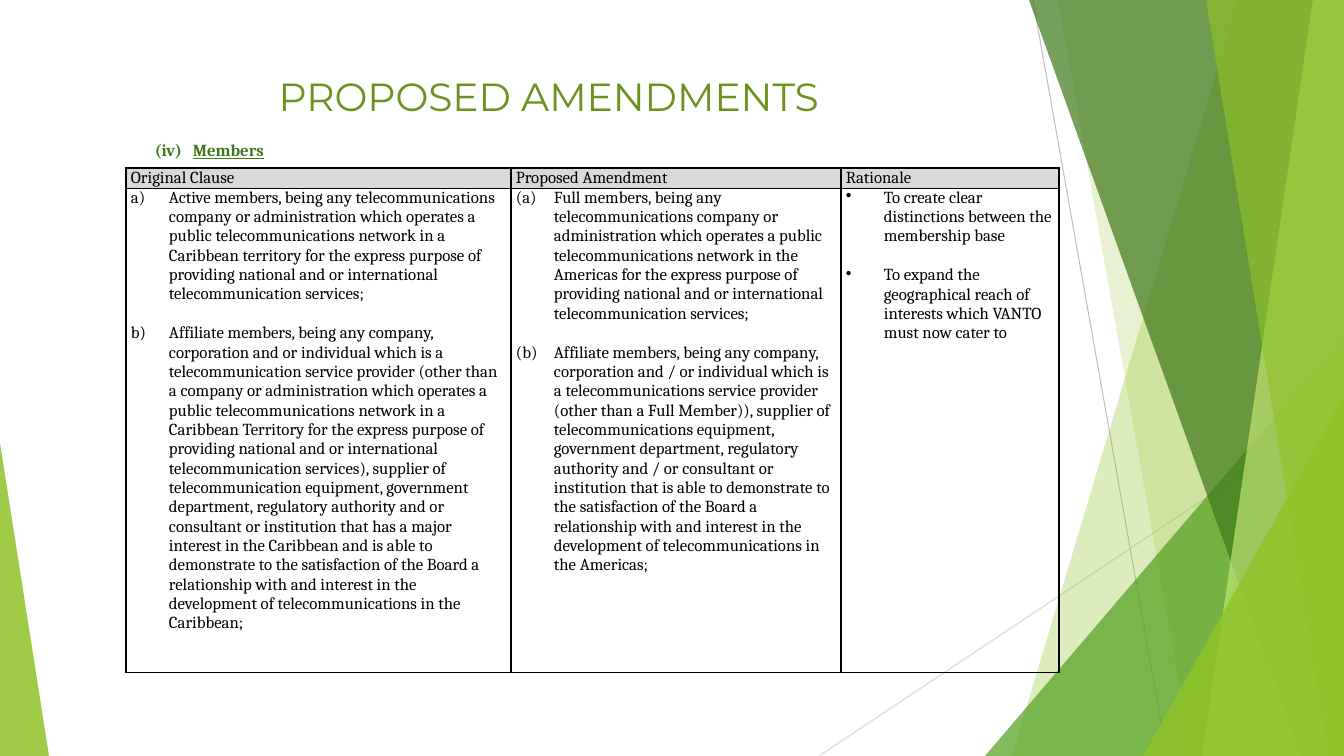
import collections

import lxml.etree
import pptx
import pptx.dml.color
import pptx.enum.shapes
import pptx.enum.text
import pptx.oxml
import pptx.oxml.ns
import pptx.util

RGBColor = pptx.dml.color.RGBColor
Shape = pptx.enum.shapes.MSO_SHAPE
Anchor = pptx.enum.text.MSO_ANCHOR
Align = pptx.enum.text.PP_ALIGN
Pt = pptx.util.Pt
qn = pptx.oxml.ns.qn

EMU_PER_PX = 914400 / 100.8
PAGE_WIDTH, PAGE_HEIGHT = 1344, 756

BLACK = RGBColor(0x00, 0x00, 0x00)
HEADER_GREY = RGBColor(0xD9, 0xD9, 0xD9)
LINE_GREY = RGBColor(0xBF, 0xBF, 0xBF)
LIME = RGBColor(0x90, 0xC2, 0x26)
PALE_LIME = RGBColor(0xC0, 0xE4, 0x74)
GREEN = RGBColor(0x54, 0xA0, 0x21)
DARK_GREEN = RGBColor(0x3F, 0x78, 0x19)
TITLE_GREEN = RGBColor(0x6C, 0x92, 0x1D)

BODY_FONT = {"name": "Cambria", "size": Pt(12)}
HANGING = 38

Box = collections.namedtuple("Box", "left top width height")

# Clause items hang from a label; each column has its own label style.
COLUMNS = [
    ("Original Clause", 385, "alphaLcParenR", [
        "Active members, being any telecommunications company or administration which operates a public "
        "telecommunications network in a Caribbean territory for the express purpose of providing national "
        "and or international telecommunication services;",
        "Affiliate members, being any company, corporation and or individual which is a telecommunication "
        "service provider (other than a company or administration which operates a public telecommunications "
        "network in a Caribbean Territory for the express purpose of providing national and or international "
        "telecommunication services), supplier of telecommunication equipment, government department, "
        "regulatory authority and or consultant or institution that has a major interest in the Caribbean "
        "and is able to demonstrate to the satisfaction of the Board a relationship with and interest in "
        "the development of telecommunications in the Caribbean;",
    ]),
    ("Proposed Amendment", 330, "alphaLcParenBoth", [
        "Full members, being any telecommunications company or administration which operates a public "
        "telecommunications network in the Americas for the express purpose of providing national and or "
        "international telecommunication services;",
        "Affiliate members, being any company, corporation and / or individual which is a "
        "telecommunications service provider (other than a Full Member)), supplier of telecommunications "
        "equipment, government department, regulatory authority and / or consultant or institution that is "
        "able to demonstrate to the satisfaction of the Board a relationship with and interest in the "
        "development of telecommunications in the Americas;",
    ]),
    ("Rationale", 218, None, [
        "To create clear distinctions between the membership base",
        "To expand the geographical reach of interests which VANTO must now cater to",
    ]),
]


def px(length):
    return round(length * EMU_PER_PX)


def set_all(target, values):
    for name, value in values.items():
        setattr(target, name, value)


def add_span(para, text, color, **values):
    span = para.add_run()
    span.text = text
    set_all(span.font, values)
    span.font.color.rgb = color


def hang(para):
    properties = para._p.get_or_add_pPr()
    properties.set("marL", str(px(HANGING)))
    properties.set("indent", str(-px(HANGING)))
    return properties


def paint(shape, color, opacity):
    """Give a shape a see-through fill with no outline or shadow."""
    shape.shadow.inherit = False
    shape.fill.solid()
    shape.fill.fore_color.rgb = color
    shape.line.fill.background()
    fill = shape.fill._xPr.find(qn("a:solidFill"))
    lxml.etree.SubElement(fill[0], qn("a:alpha"), val=str(opacity * 1000))


def add_triangle(page, box, apex, color, opacity):
    shape = page.shapes.add_shape(Shape.ISOSCELES_TRIANGLE, *map(px, box))
    shape.adjustments[0] = apex
    paint(shape, color, opacity)


def add_facet(page, box, top_x, bottom_x, color, opacity):
    """Fill the box to the right of a slanting edge."""
    right, bottom = box.left + box.width, box.top + box.height
    builder = page.shapes.build_freeform(box.left + top_x, box.top, scale=EMU_PER_PX)
    builder.add_line_segments([(right, box.top), (right, bottom), (box.left + bottom_x, bottom)])
    paint(builder.convert_to_shape(), color, opacity)


def add_hairline(page, start, end, color):
    line = page.shapes.add_connector(
        pptx.enum.shapes.MSO_CONNECTOR.STRAIGHT, *map(px, start + end))
    line.line.color.rgb = color
    line.line.width = Pt(0.75)
    lxml.etree.SubElement(line._element.spPr, qn("a:effectLst"))


def draw_facets(page, box):
    right, bottom = box.left + box.width, box.top + box.height
    add_hairline(page, (box.left + 214, box.top), (box.left + 348, bottom), LINE_GREY)
    add_hairline(page, (right, box.top + 406), (box.left, bottom), HEADER_GREY)

    def corner(left, top, color, opacity):
        area = Box(box.left + left, box.top + top, box.width - left, box.height - top)
        add_triangle(page, area, 1, color, opacity)

    add_facet(page, box, 419, 193, LIME, 30)
    add_facet(page, box, 239, 373, LIME, 20)
    corner(166, 336, GREEN, 72)
    add_facet(page, box, 210, 482, DARK_GREEN, 70)
    add_facet(page, box, 494, 383, PALE_LIME, 70)
    add_facet(page, box, 387, 510, LIME, 65)
    corner(324, 396, LIME, 80)


def add_text_box(page, box, anchor):
    frame = page.shapes.add_textbox(*map(px, box)).text_frame
    set_all(frame, {"word_wrap": True, "vertical_anchor": anchor})
    return frame.paragraphs[0]


def draw_title(page, box):
    para = add_text_box(page, box, Anchor.TOP)
    para.alignment = Align.CENTER
    add_span(para, "PROPOSED AMENDMENTS", TITLE_GREEN, name="Montserrat", size=Pt(28))


def draw_subheading(page, box):
    para = add_text_box(page, box, Anchor.MIDDLE)
    hang(para)
    add_span(para, "(iv)\t", DARK_GREEN, bold=True, **BODY_FONT)
    add_span(para, "Members", DARK_GREEN, bold=True, underline=True, **BODY_FONT)


def format_cell(cell):
    set_all(cell, {"margin_left": px(5), "margin_right": px(5), "margin_top": 0, "margin_bottom": 0})
    properties = cell._tc.get_or_add_tcPr()
    for position, side in enumerate(("lnL", "lnR", "lnT", "lnB")):
        border = lxml.etree.Element(qn("a:" + side), w=str(Pt(1)))
        fill = lxml.etree.SubElement(border, qn("a:solidFill"))
        lxml.etree.SubElement(fill, qn("a:srgbClr"), val=str(BLACK))
        properties.insert(position, border)


def fill_clauses(frame, numbering, clauses):
    for number, clause in enumerate(clauses, 1):
        para = frame.paragraphs[0] if number == 1 else frame.add_paragraph()
        para.space_before = Pt(0 if number == 1 else 14)
        properties = hang(para)
        if numbering:
            lxml.etree.SubElement(properties, qn("a:buAutoNum"), type=numbering, startAt=str(number))
        else:
            lxml.etree.SubElement(properties, qn("a:buChar"), char="•")
        add_span(para, clause, BLACK, **BODY_FONT)


def draw_table(page, box, header_height):
    table = page.shapes.add_table(2, len(COLUMNS), *map(px, box)).table
    set_all(table, {"first_row": False, "horz_banding": False})
    table.rows[0].height = px(header_height)
    table.rows[1].height = px(box.height - header_height)
    for index, (heading, width, numbering, clauses) in enumerate(COLUMNS):
        table.columns[index].width = px(width)
        header, body = table.cell(0, index), table.cell(1, index)
        header.fill.solid()
        header.fill.fore_color.rgb = HEADER_GREY
        body.fill.background()
        format_cell(header)
        format_cell(body)
        add_span(header.text_frame.paragraphs[0], heading, BLACK, **BODY_FONT)
        fill_clauses(body.text_frame, numbering, clauses)


def main():
    deck = pptx.Presentation()
    set_all(deck, {"slide_width": px(PAGE_WIDTH), "slide_height": px(PAGE_HEIGHT)})
    page = deck.slides.add_slide(deck.slide_layouts[6])
    draw_facets(page, Box(819, 0, 525, PAGE_HEIGHT))
    add_triangle(page, Box(0, 443, 49, 313), 0, LIME, 85)
    draw_title(page, Box(75, 67, 947, 68))
    draw_subheading(page, Box(145, 135, 556, 30))
    draw_table(page, Box(126, 168, 933, 504), 20)
    deck.save("out.pptx")


if __name__ == "__main__":
    main()
